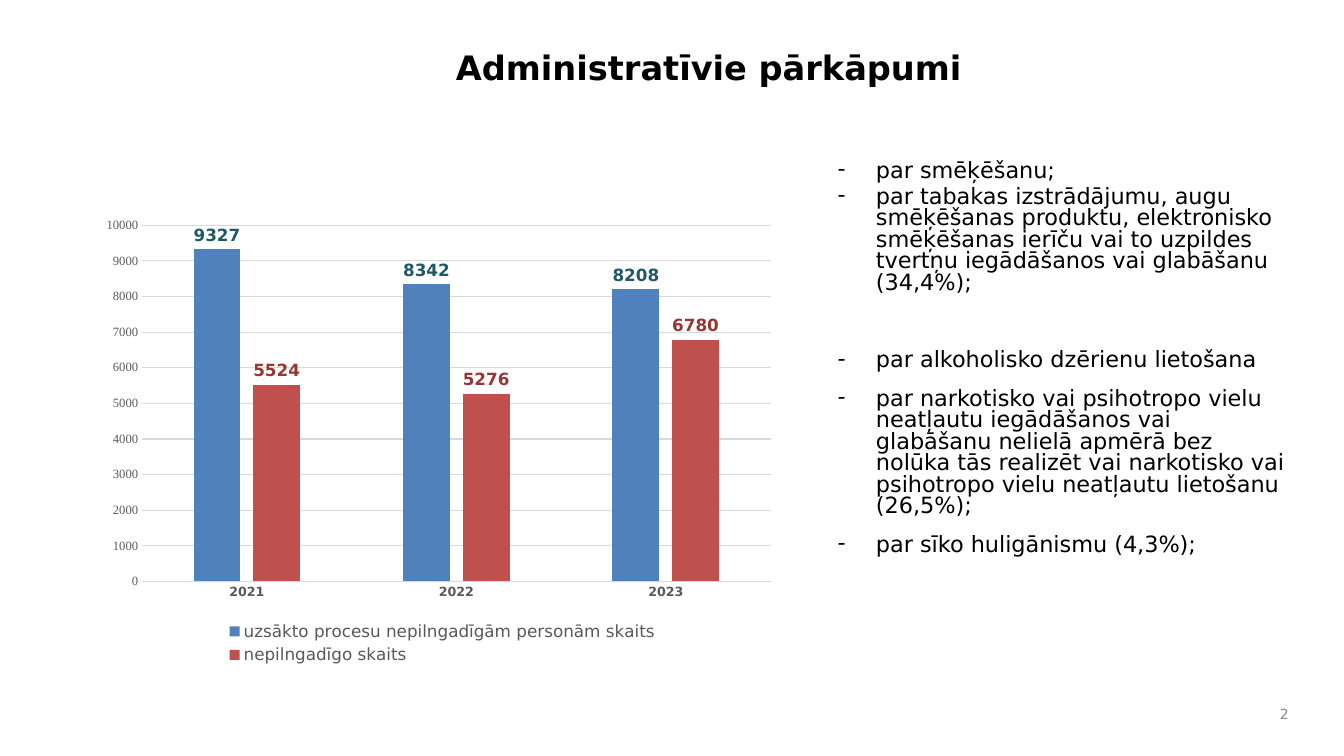
from pptx import Presentation
from pptx.chart.data import CategoryChartData
from pptx.dml.color import RGBColor
from pptx.enum.chart import XL_CHART_TYPE as ChartType, XL_LABEL_POSITION as LabelPosition
from pptx.enum.chart import XL_LEGEND_POSITION as LegendPosition, XL_TICK_MARK as TickMark
from pptx.enum.text import MSO_ANCHOR as Anchor, PP_ALIGN as Align
from pptx.oxml import parse_xml
from pptx.oxml.ns import nsdecls
from pptx.util import Inches, Pt

COLORS = {
    "text": "000000", "number": "898989", "axis": "595959", "grid": "D9D9D9",
    "cases": "4F81BD", "cases_label": "215968",
    "minors": "C0504D", "minors_label": "953735",
}
SANS, SERIF = "DejaVu Sans", "Times New Roman"

TITLE = "Administratīvie pārkāpumi"
PAGE_NUMBER = "2"
OFFENCES = [
    ("par smēķēšanu;", 3.2),
    ("par tabakas izstrādājumu, augu smēķēšanas produktu, elektronisko smēķēšanas "
     "ierīču vai to uzpildes tvertņu iegādāšanos vai glabāšanu (34,4%);", 3.2),
    ("par alkoholisko dzērienu lietošana", 40),
    ("par narkotisko vai psihotropo vielu neatļautu iegādāšanos vai glabāšanu nelielā "
     "apmērā bez nolūka tās realizēt vai narkotisko vai psihotropo vielu neatļautu "
     "lietošanu (26,5%);", 12),
    ("par sīko huligānismu (4,3%);", 12),
]
YEARS = ["2021", "2022", "2023"]
SERIES = [
    ("uzsākto procesu nepilngadīgām personām skaits", (9327, 8342, 8208), "cases"),
    ("nepilngadīgo skaits", (5524, 5276, 6780), "minors"),
]
PLOT_AREA = {"x": 0.07, "y": 0.03, "w": 0.91, "h": 0.78}
LEGEND_AREA = {"x": 0.19, "y": 0.89, "w": 0.63, "h": 0.11}


def rgb(name):
    return RGBColor.from_string(COLORS[name])


def style(font, size, color, face=SANS, bold=False):
    font.size, font.name, font.bold = Pt(size), face, bold
    font.color.rgb = rgb(color)


def add_text(slide, box, lines, size, color, align=Align.LEFT, bold=False):
    frame = slide.shapes.add_textbox(*map(Inches, box)).text_frame
    frame.word_wrap = True
    frame.text = "\n".join(lines)
    for paragraph in frame.paragraphs:
        paragraph.alignment = align
        style(paragraph.runs[0].font, size, color, bold=bold)
    return frame


def layout_xml(area, inner=False):
    target = '<c:layoutTarget val="inner"/>' if inner else ""
    modes = "".join(f'<c:{side}Mode val="edge"/>' for side in "xy")
    sizes = "".join(f'<c:{side} val="{value}"/>' for side, value in area.items())
    return parse_xml(f'<c:layout {nsdecls("c")}><c:manualLayout>{target}{modes}{sizes}'
                     '</c:manualLayout></c:layout>')


def add_offences(slide):
    frame = add_text(slide, (8.21, 1.55, 4.68, 4.78), [text for text, _ in OFFENCES],
                     16, "text")
    for paragraph, (_, gap) in zip(frame.paragraphs, OFFENCES):
        paragraph.line_spacing = 0.8
        paragraph.space_before = Pt(gap)
        properties = paragraph._p.get_or_add_pPr()
        properties.set("marL", str(Inches(0.38)))
        properties.set("indent", str(-Inches(0.38)))
        properties.append(parse_xml(f'<a:buFont {nsdecls("a")} typeface="{SANS}"/>'))
        properties.append(parse_xml(f'<a:buChar {nsdecls("a")} char="-"/>'))


def add_cases_chart(slide):
    data = CategoryChartData()
    data.categories = YEARS
    for name, values, _ in SERIES:
        data.add_series(name, values)
    box = map(Inches, (0.93, 2.1, 6.85, 4.53))
    chart = slide.shapes.add_chart(ChartType.COLUMN_CLUSTERED, *box, data).chart
    chart.has_title = False
    style(chart.font, 10, "text", SERIF)

    plot = chart.plots[0]
    plot.gap_width, plot.overlap, plot.vary_by_categories = 219, -27, False
    for series, (_, _, color) in zip(plot.series, SERIES):
        series.format.fill.solid()
        series.format.fill.fore_color.rgb = rgb(color)
        labels = series.data_labels
        labels.show_value = True
        labels.position = LabelPosition.OUTSIDE_END
        style(labels.font, 12, f"{color}_label", bold=True)

    years, counts = chart.category_axis, chart.value_axis
    for axis in (years, counts):
        axis.major_tick_mark = axis.minor_tick_mark = TickMark.NONE
    style(years.tick_labels.font, 9, "axis", bold=True)
    style(counts.tick_labels.font, 9, "axis", SERIF)
    counts.minimum_scale, counts.maximum_scale, counts.major_unit = 0, 10000, 1000
    counts.format.line.fill.background()
    for line in (years.format.line, counts.major_gridlines.format.line):
        line.color.rgb = rgb("grid")
        line.width = Pt(0.75)

    chart.has_legend = True
    legend = chart.legend
    legend.position = LegendPosition.BOTTOM
    legend.include_in_layout = False
    style(legend.font, 12, "axis")
    plot_area = chart._chartSpace.chart.plotArea
    for parent, area, index in ((plot_area, PLOT_AREA, 0), (legend._element, LEGEND_AREA, 1)):
        for old in parent.xpath("c:layout"):
            parent.remove(old)
        parent.insert(index, layout_xml(area, parent is plot_area))


def main():
    deck = Presentation()
    deck.slide_width, deck.slide_height = Inches(13.33), Inches(7.5)
    slide = deck.slides.add_slide(deck.slide_layouts[6])
    add_text(slide, (2.82, 0.42, 8.42, 1.13), [TITLE], 24, "text", Align.CENTER, True)
    add_offences(slide)
    add_cases_chart(slide)
    number = add_text(slide, (12.44, 6.92, 0.44, 0.33), [PAGE_NUMBER], 10, "number", Align.RIGHT)
    number.vertical_anchor = Anchor.MIDDLE
    deck.save("out.pptx")


if __name__ == "__main__":
    main()
